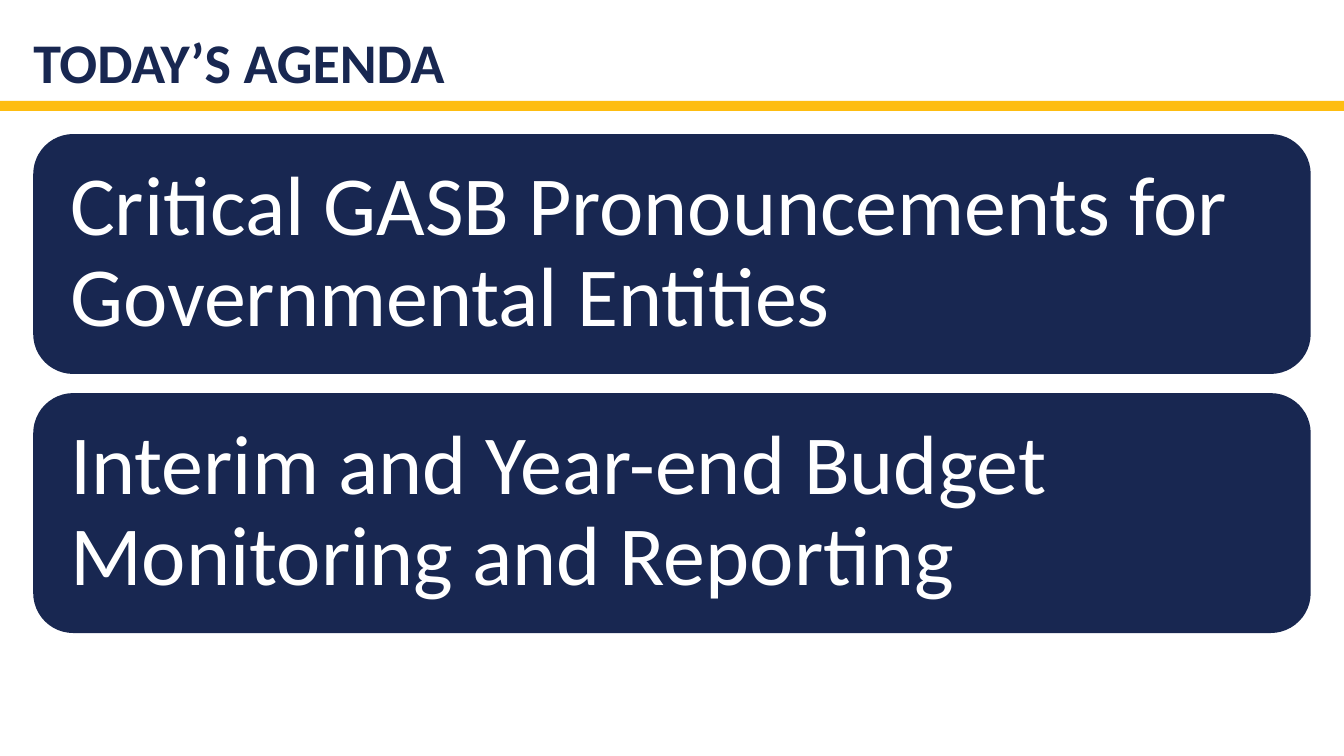
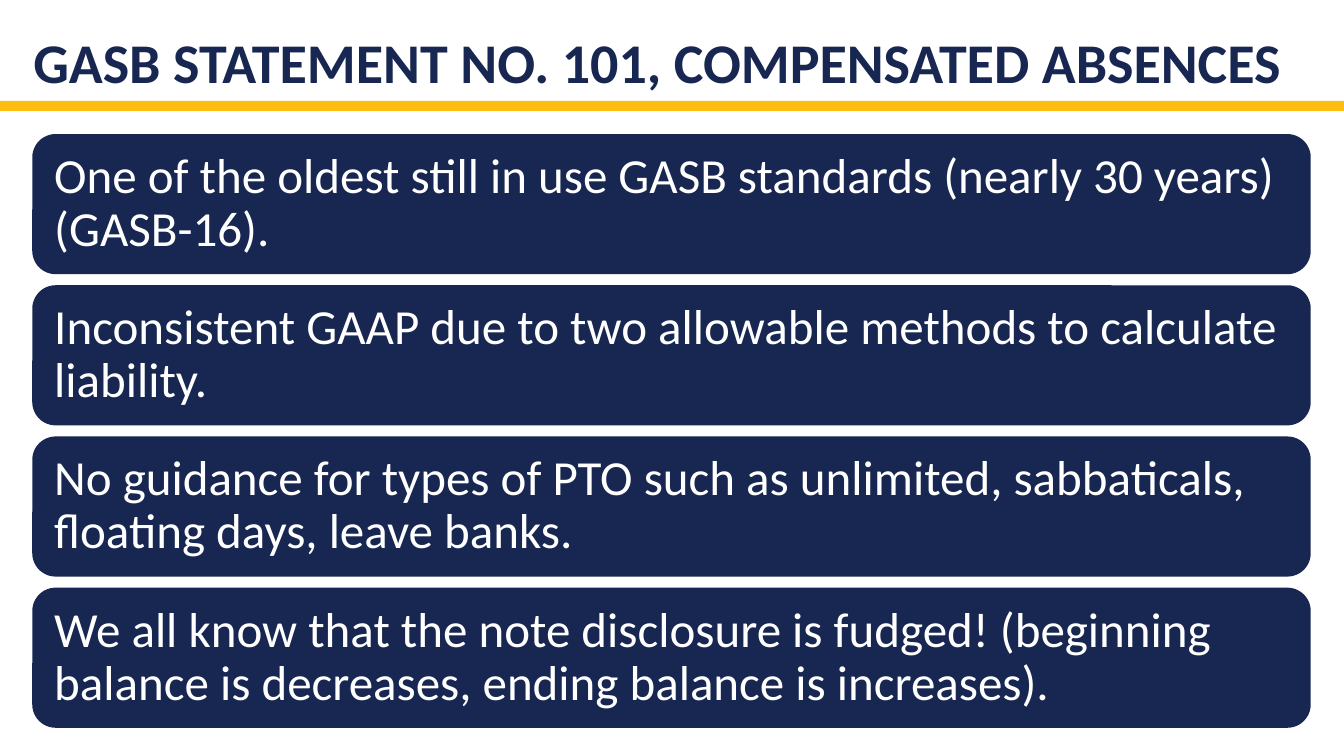
import dataclasses

import pptx
import pptx.dml.color
import pptx.enum.shapes
import pptx.enum.text
import pptx.util

Inches = pptx.util.Inches
Pt = pptx.util.Pt
RGBColor = pptx.dml.color.RGBColor
MSO_SHAPE = pptx.enum.shapes.MSO_SHAPE
MSO_ANCHOR = pptx.enum.text.MSO_ANCHOR
MSO_AUTO_SIZE = pptx.enum.text.MSO_AUTO_SIZE
PP_ALIGN = pptx.enum.text.PP_ALIGN

SLIDE_WIDTH = 13.33
TITLE_ONLY = 5


@dataclasses.dataclass(frozen=True)
class Theme:
    navy: RGBColor = RGBColor.from_string("182751")
    gold: RGBColor = RGBColor.from_string("FEBD11")
    white: RGBColor = RGBColor.from_string("FFFFFF")
    font: str = "Calibri"
    title_size: int = 40
    agenda_size: int = 60
    point_size: int = 35


THEME = Theme()


@dataclasses.dataclass(frozen=True)
class CardStack:
    """Measures, in inches, of a column of equal cards."""
    left: float
    width: float
    height: float
    gap: float
    padding: float
    text_size: int
    top: float = 1.33


AGENDA_CARDS = CardStack(0.33, 12.67, 2.38, 0.19, 0.25, THEME.agenda_size)
POINT_CARDS = CardStack(0.32, 12.68, 1.39, 0.11, 0.15, THEME.point_size)


def set_all(target, values):
    for attribute, value in values.items():
        setattr(target, attribute, value)


def set_frame(frame, anchor, side, upright):
    """Anchor a text frame and set its side and its top and bottom margins."""
    set_all(frame, {
        "word_wrap": True,
        "auto_size": MSO_AUTO_SIZE.NONE,
        "vertical_anchor": anchor,
        "margin_left": Inches(side),
        "margin_right": Inches(side),
        "margin_top": Inches(upright),
        "margin_bottom": Inches(upright),
    })


def write(frame, text, size, color, bold=False):
    frame.text = text
    paragraph = frame.paragraphs[0]
    set_all(paragraph, {"alignment": PP_ALIGN.LEFT, "line_spacing": 0.9})
    set_all(paragraph.font, {"name": THEME.font, "size": Pt(size), "bold": bold})
    paragraph.font.color.rgb = color


def add_block(slide, preset, box, color):
    block = slide.shapes.add_shape(preset, *map(Inches, box))
    block.shadow.inherit = False
    block.fill.solid()
    block.fill.fore_color.rgb = color
    block.line.fill.background()
    return block


def style_layout(layout):
    """Place the title for every slide that uses the layout."""
    title = next(iter(layout.placeholders))
    set_all(title, {
        "left": Inches(0.33),
        "top": Inches(0),
        "width": Inches(12.67),
        "height": Inches(1),
    })
    set_frame(title.text_frame, MSO_ANCHOR.BOTTOM, 0, 0.05)


def add_layout_band(layout, slide):
    """Draw the gold band on a slide and move it to the shared layout."""
    band = add_block(slide, MSO_SHAPE.RECTANGLE, (0, 1, SLIDE_WIDTH, 0.1), THEME.gold)
    layout.shapes.element.append(band.element)


def add_cards(slide, texts, stack):
    for row, text in enumerate(texts):
        top = stack.top + row * (stack.height + stack.gap)
        box = (stack.left, top, stack.width, stack.height)
        card = add_block(slide, MSO_SHAPE.ROUNDED_RECTANGLE, box, THEME.navy)
        set_frame(card.text_frame, MSO_ANCHOR.MIDDLE, stack.padding, stack.padding)
        write(card.text_frame, text, stack.text_size, THEME.white)


def add_card_slide(deck, layout, heading, texts, stack):
    slide = deck.slides.add_slide(layout)
    write(slide.shapes.title.text_frame, heading, THEME.title_size, THEME.navy, bold=True)
    add_cards(slide, texts, stack)
    return slide


def main():
    deck = pptx.Presentation()
    deck.slide_width, deck.slide_height = Inches(SLIDE_WIDTH), Inches(7.5)
    layout = deck.slide_layouts[TITLE_ONLY]
    style_layout(layout)

    agenda = add_card_slide(deck, layout, "TODAY’S AGENDA", [
        "Critical GASB Pronouncements for Governmental Entities",
        "Interim and Year-end Budget Monitoring and Reporting",
    ], AGENDA_CARDS)
    add_layout_band(layout, agenda)

    add_card_slide(deck, layout, "GASB STATEMENT NO. 101, COMPENSATED ABSENCES", [
        "One of the oldest still in use GASB standards (nearly 30 years) (GASB-16).",
        "Inconsistent GAAP due to two allowable methods to calculate liability.",
        "No guidance for types of PTO such as unlimited, sabbaticals, "
        "floating days, leave banks.",
        "We all know that the note disclosure is fudged! "
        "(beginning balance is decreases, ending balance is increases).",
    ], POINT_CARDS)

    deck.save("out.pptx")


if __name__ == "__main__":
    main()
